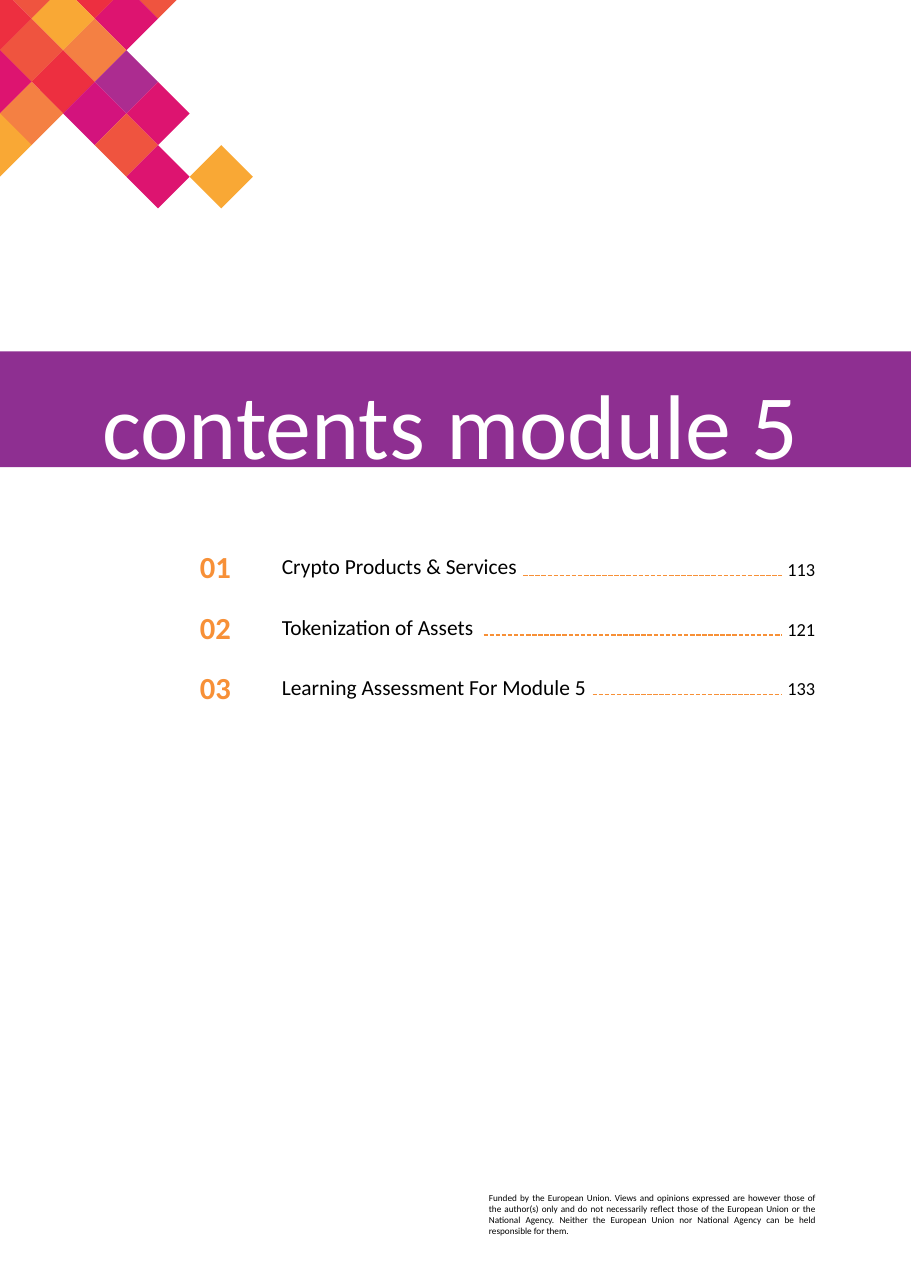
from dataclasses import dataclass

import lxml.etree
import pptx
import pptx.dml.color
import pptx.enum.dml
import pptx.enum.shapes
import pptx.enum.text
import pptx.oxml.ns
import pptx.util

RGBColor = pptx.dml.color.RGBColor
Align = pptx.enum.text.PP_ALIGN
Anchor = pptx.enum.text.MSO_ANCHOR

WHITE = RGBColor(0xFF, 0xFF, 0xFF)
BLACK = RGBColor(0x00, 0x00, 0x00)
PURPLE = RGBColor(0x8E, 0x2F, 0x91)
ORANGE = RGBColor(0xF7, 0x90, 0x37)
RED = RGBColor(0xED, 0x2F, 0x40)
PINK = RGBColor(0xDD, 0x14, 0x70)
MAGENTA = RGBColor(0xD3, 0x13, 0x7D)
VIOLET = RGBColor(0xAC, 0x2C, 0x90)
CORAL = RGBColor(0xEF, 0x54, 0x3F)
APRICOT = RGBColor(0xF4, 0x80, 0x43)
AMBER = RGBColor(0xF9, 0xA8, 0x35)

FONT = "Calibri"
SLIDE_WIDTH = pptx.util.Inches(8.27)
SLIDE_HEIGHT = pptx.util.Inches(11.69)
TILE_STEP = SLIDE_WIDTH * 3.47 / 100
MOSAIC_TOP = SLIDE_HEIGHT * 1.45 / 100

Point = tuple[float, float]


@dataclass(frozen=True)
class Box:
    """Percentages of the slide's width and height."""
    left: float
    top: float
    width: float
    height: float

    def emu(self) -> tuple[int, int, int, int]:
        return (across(self.left), down(self.top),
                across(self.width), down(self.height))


@dataclass(frozen=True)
class TextStyle:
    size: float
    color: RGBColor = BLACK
    bold: bool = False
    align: Align = Align.LEFT
    anchor: Anchor = Anchor.MIDDLE


@dataclass(frozen=True)
class Entry:
    number: str
    topic: str
    page: str
    leader_start: float


@dataclass(frozen=True)
class Tile:
    column: int
    row: int
    color: RGBColor


ENTRIES = [
    Entry("01", "Crypto Products & Services", "113", 57.44),
    Entry("02", "Tokenization of Assets", "121", 53.08),
    Entry("03", "Learning Assessment For Module 5", "133", 65.05),
]

TILES = [
    Tile(1, -1, CORAL), Tile(3, -1, RED), Tile(5, -1, CORAL),
    Tile(0, 0, RED), Tile(2, 0, AMBER), Tile(4, 0, PINK),
    Tile(1, 1, CORAL), Tile(3, 1, APRICOT),
    Tile(0, 2, PINK), Tile(2, 2, RED), Tile(4, 2, VIOLET),
    Tile(1, 3, APRICOT), Tile(3, 3, MAGENTA), Tile(5, 3, PINK),
    Tile(0, 4, AMBER), Tile(4, 4, CORAL),
    Tile(5, 5, PINK), Tile(7, 5, AMBER),
]

DISCLAIMER = (
    "Funded by the European Union. Views and opinions expressed are however "
    "those of the author(s) only and do not necessarily reflect those of the "
    "European Union or the National Agency. Neither the European Union nor "
    "National Agency can be held responsible for them."
)

NUMBER_STYLE = TextStyle(20, ORANGE, bold=True, align=Align.CENTER)
TOPIC_STYLE = TextStyle(14)
PAGE_STYLE = TextStyle(12, align=Align.RIGHT)
TITLE_STYLE = TextStyle(60, WHITE, anchor=Anchor.TOP)
DISCLAIMER_STYLE = TextStyle(6, align=Align.JUSTIFY, anchor=Anchor.TOP)


def across(percent: float) -> int:
    return round(SLIDE_WIDTH * percent / 100)


def down(percent: float) -> int:
    return round(SLIDE_HEIGHT * percent / 100)


def write(frame, text: str, style: TextStyle) -> None:
    frame.text = text
    frame.word_wrap = True
    frame.auto_size = pptx.enum.text.MSO_AUTO_SIZE.NONE
    frame.vertical_anchor = style.anchor
    paragraph = frame.paragraphs[0]
    paragraph.alignment = style.align
    font = paragraph.runs[0].font
    font.name = FONT
    font.size = pptx.util.Pt(style.size)
    font.bold = style.bold
    font.color.rgb = style.color


def add_text(slide, box: Box, text: str, style: TextStyle) -> None:
    write(slide.shapes.add_textbox(*box.emu()).text_frame, text, style)


def paint(shape, color: RGBColor) -> None:
    shape.shadow.inherit = False
    shape.fill.solid()
    shape.fill.fore_color.rgb = color
    shape.line.fill.background()


def clip_at_zero(outline: list[Point], axis: int) -> list[Point]:
    kept = []
    for start, end in zip(outline, outline[1:] + outline[:1]):
        if start[axis] >= 0:
            kept.append(start)
        if start[axis] * end[axis] < 0:
            share = start[axis] / (start[axis] - end[axis])
            kept.append((start[0] + share * (end[0] - start[0]),
                         start[1] + share * (end[1] - start[1])))
    return kept


def add_tile(slide, tile: Tile) -> None:
    x = tile.column * TILE_STEP
    y = MOSAIC_TOP + tile.row * TILE_STEP
    outline = [(x, y - TILE_STEP), (x + TILE_STEP, y),
               (x, y + TILE_STEP), (x - TILE_STEP, y)]
    for axis in (0, 1):
        outline = clip_at_zero(outline, axis)
    builder = slide.shapes.build_freeform(*outline[0])
    builder.add_line_segments(outline[1:])
    paint(builder.convert_to_shape(), tile.color)


def add_leader(slide, start: float, end: float, top: float) -> None:
    leader = slide.shapes.add_connector(
        pptx.enum.shapes.MSO_CONNECTOR.STRAIGHT,
        across(start), down(top), across(end), down(top))
    leader.line.color.rgb = ORANGE
    leader.line.width = pptx.util.Pt(1)
    leader.line.dash_style = pptx.enum.dml.MSO_LINE.SQUARE_DOT
    lxml.etree.SubElement(leader.element.spPr, pptx.oxml.ns.qn("a:effectLst"))


def add_entry(slide, index: int, entry: Entry) -> None:
    top = 42.34 + 4.7 * index
    page_top = 42.6 + 4.62 * index
    add_text(slide, Box(19.35, top, 8.59, 3.25), entry.number, NUMBER_STYLE)
    add_text(slide, Box(29.75, top, 46.92, 3.25), entry.topic, TOPIC_STYLE)
    add_text(slide, Box(84.64, page_top, 6.05, 3.25), entry.page, PAGE_STYLE)
    add_leader(slide, entry.leader_start, 85.85, page_top + 2.1)


def add_title(slide, text: str) -> None:
    band = slide.shapes.add_shape(
        pptx.enum.shapes.MSO_SHAPE.RECTANGLE, *Box(0, 27.29, 100, 8.98).emu())
    paint(band, PURPLE)
    title = slide.shapes.title
    title.left, title.top, title.width, title.height = Box(
        10.04, 27.72, 84.64, 9.07).emu()
    write(title.text_frame, text, TITLE_STYLE)
    title.text_frame.margin_top = pptx.util.Inches(0.1)
    band.element.addnext(title.element)


def main() -> None:
    deck = pptx.Presentation()
    deck.slide_width, deck.slide_height = SLIDE_WIDTH, SLIDE_HEIGHT
    slide = deck.slides.add_slide(deck.slide_layouts.get_by_name("Title Only"))
    for tile in TILES:
        add_tile(slide, tile)
    add_title(slide, "contents module 5")
    for index, entry in enumerate(ENTRIES):
        add_entry(slide, index, entry)
    add_text(slide, Box(52.48, 92.13, 38.21, 4.28), DISCLAIMER, DISCLAIMER_STYLE)
    deck.save("out.pptx")


if __name__ == "__main__":
    main()
